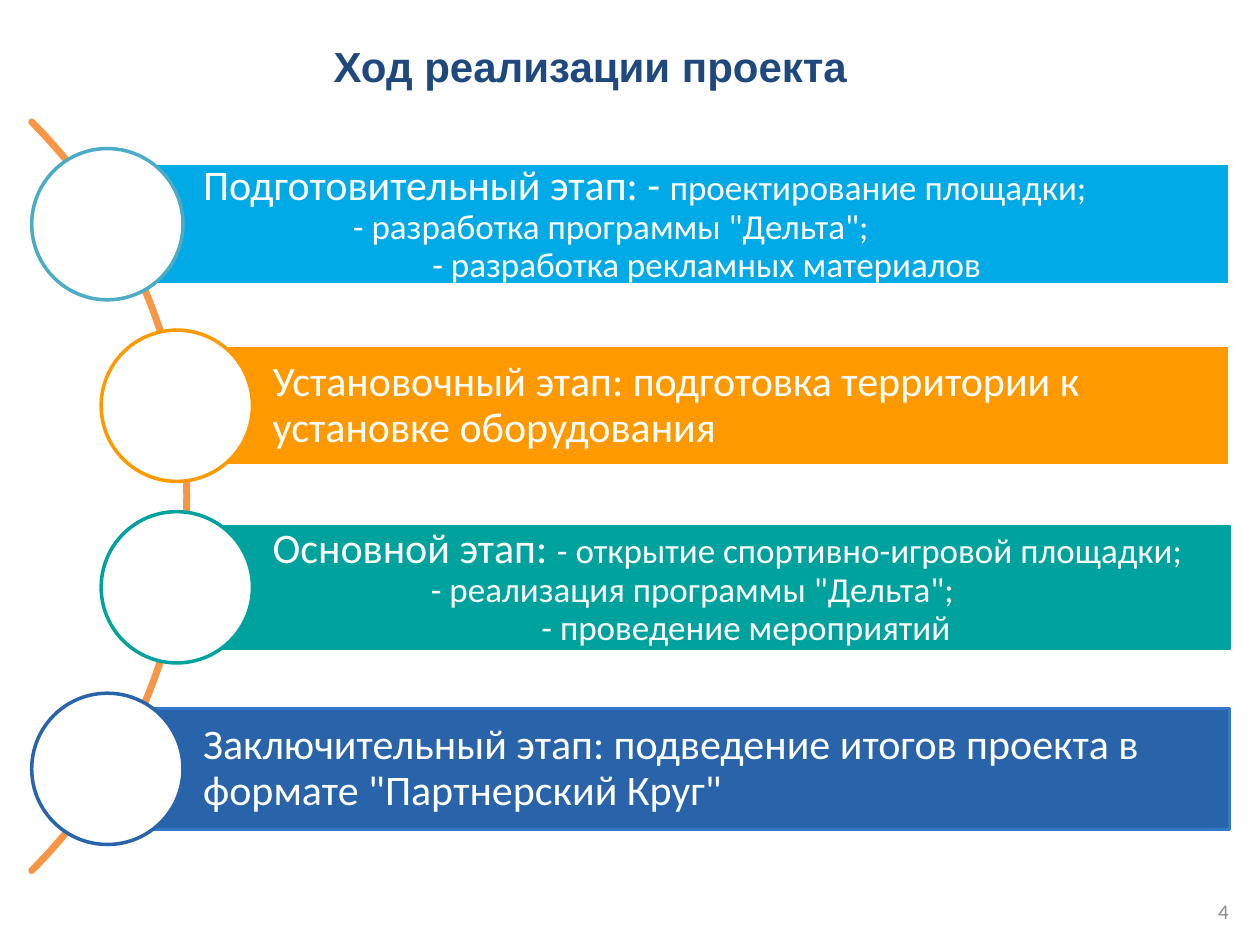
from math import cos, radians, sin

from pptx import Presentation
from pptx.dml.color import RGBColor
from pptx.enum.shapes import MSO_SHAPE
from pptx.enum.text import MSO_ANCHOR, PP_ALIGN
from pptx.util import Cm, Pt

WHITE = RGBColor(0xFF, 0xFF, 0xFF)
NAVY = RGBColor(0x1F, 0x49, 0x7D)
GRAY = RGBColor(0x8C, 0x8C, 0x8C)
ORANGE = RGBColor(0xF7, 0x96, 0x46)
SKY = RGBColor(0x00, 0xAA, 0xE6)
AQUA = RGBColor(0x4B, 0xAC, 0xC6)
AMBER = RGBColor(0xFF, 0x99, 0x00)
TEAL = RGBColor(0x00, 0xA2, 0x9E)
BLUE = RGBColor(0x29, 0x63, 0xA9)
EDGE = RGBColor(0x32, 0x78, 0xCC)

# Boxes in cm: left, top, width, height
TITLE = (0.38, 0.58, 23.04, 1.47)
NUMBER = (19.1, 17.86, 5.92, 1.02)
STAGES = (0.64, 2.46, 24.15, 15.09)

HEAD = {"name": "Arial", "size": Pt(24), "bold": True}
BIG = {"name": "Calibri", "size": Pt(24)}
MID = {"name": "Calibri", "size": Pt(20)}
SMALL = {"name": "Calibri", "size": Pt(12)}

# Each stage: bar fill, bar edge, ring colour, inset step,
# lines of (indent in cm, [(text, format), ...])
STEPS = [
    (SKY, WHITE, AQUA, 0, [
        (0, [("Подготовительный этап: - ", BIG), ("проектирование площадки;", MID)]),
        (3.02, [('- разработка программы "Дельта";', MID)]),
        (4.62, [("- разработка рекламных материалов", MID)])]),
    (AMBER, WHITE, AMBER, 1, [
        (0, [("Установочный этап: подготовка территории к установке оборудования", BIG)])]),
    (TEAL, TEAL, TEAL, 1, [
        (0, [("Основной этап: ", BIG), ("- открытие спортивно-игровой площадки;", MID)]),
        (3.19, [('- реализация программы "Дельта";', MID)]),
        (5.42, [("- проведение мероприятий", MID)])]),
    (BLUE, EDGE, BLUE, 0, [
        (0, [('Заключительный этап: подведение итогов проекта в формате "Партнерский Круг"', BIG)])]),
]


def apply(item, values):
    for key, value in values.items():
        setattr(item, key, value)


def add_run(para, text, values, color):
    run = para.add_run()
    run.text = text
    apply(run.font, values)
    run.font.color.rgb = color


def add_form(slide, kind, box, fill, edge):
    form = slide.shapes.add_shape(kind, *map(Cm, box))
    form.shadow.inherit = False
    form.fill.solid()
    form.fill.fore_color.rgb = fill
    form.line.color.rgb = edge
    form.line.width = Pt(2)
    return form


def add_title(slide, box):
    title = slide.shapes.title
    apply(title, dict(zip(("left", "top", "width", "height"), map(Cm, box))))
    title.text_frame.vertical_anchor = MSO_ANCHOR.MIDDLE
    para = title.text_frame.paragraphs[0]
    para.alignment = PP_ALIGN.CENTER
    add_run(para, "Ход реализации проекта", HEAD, NAVY)


def add_number(slide, box):
    frame = slide.shapes.add_textbox(*map(Cm, box)).text_frame
    apply(frame, {"word_wrap": True, "vertical_anchor": MSO_ANCHOR.MIDDLE})
    para = frame.paragraphs[0]
    para.alignment = PP_ALIGN.RIGHT
    add_run(para, "4", SMALL, GRAY)


def add_arc(slide, box):
    """Quarter circle whose chord is the left side of the box."""
    left, top, _, height = box
    radius = height / 2 / sin(radians(45))
    mid_x = left - radius * cos(radians(45))
    mid_y = top + height / 2
    points = [(Cm(mid_x + radius * cos(radians(turn))),
               Cm(mid_y + radius * sin(radians(turn))))
              for turn in range(-45, 46)]
    pen = slide.shapes.build_freeform(*points[0])
    pen.add_line_segments(points[1:], close=False)
    arc = pen.convert_to_shape()
    arc.shadow.inherit = False
    arc.fill.background()
    arc.line.color.rgb = ORANGE
    arc.line.width = Pt(4)
    arc.line._get_or_add_ln().set("cap", "rnd")


def add_stage(slide, box, step, ring):
    fill, edge, rim, _, lines = step
    left, top, _, height = box
    # Bar with its text
    bar = add_form(slide, MSO_SHAPE.RECTANGLE, box, fill, edge)
    frame = bar.text_frame
    apply(frame, {"word_wrap": True, "vertical_anchor": MSO_ANCHOR.MIDDLE,
                  "margin_left": Cm(1.93), "margin_right": Cm(0.18),
                  "margin_top": Cm(0.18), "margin_bottom": Cm(0.18)})
    for spot, (indent, runs) in enumerate(lines):
        para = frame.add_paragraph() if spot else frame.paragraphs[0]
        apply(para, {"alignment": PP_ALIGN.LEFT, "line_spacing": 0.9})
        para._p.get_or_add_pPr().set("marL", str(Cm(indent)))
        for text, values in runs:
            add_run(para, text, values, WHITE)
    # Ring centred on the left end of the bar
    place = (left - ring / 2, top + (height - ring) / 2, ring, ring)
    add_form(slide, MSO_SHAPE.OVAL, place, WHITE, rim)


def add_stages(slide, box):
    left, top, width, _ = box
    ring, high, pitch, shift = 3.05, 2.44, 3.66, 1.4
    add_arc(slide, box)
    for row, step in enumerate(STEPS):
        inset = ring / 2 + shift * step[3]
        place = (left + inset, top + 0.84 + row * pitch, width - inset, high)
        add_stage(slide, place, step, ring)


def main():
    deck = Presentation()
    apply(deck, {"slide_width": Cm(25.4), "slide_height": Cm(19.05)})
    slide = deck.slides.add_slide(deck.slide_layouts[5])
    add_title(slide, TITLE)
    add_number(slide, NUMBER)
    add_stages(slide, STAGES)
    deck.save("out.pptx")


if __name__ == "__main__":
    main()
